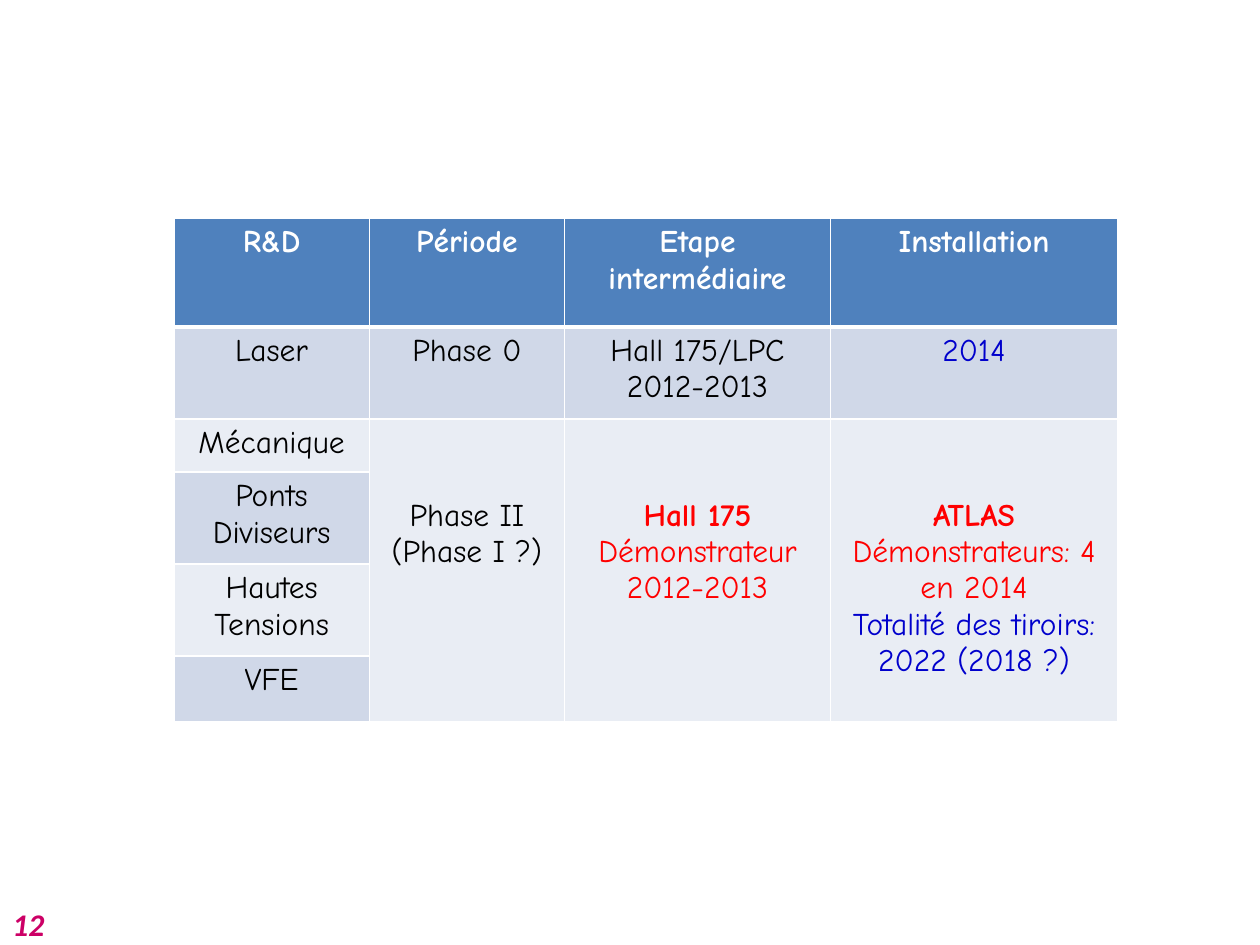
import pptx
import pptx.util
import pptx.dml.color
import pptx.enum.text
from lxml import etree

Pt = pptx.util.Pt
HUES = {"head": "4F81BD", "dark": "D0D8E8", "light": "E9EDF4", "white": "FFFFFF",
        "black": "000000", "red": "FF0000", "blue": "0000CC", "pink": "CC0066"}
NS = "http://schemas.openxmlformats.org/drawingml/2006/main"
COLS = [111.6, 111.6, 151.9, 164.2]
ROWS = [62.2, 52.6, 30.4, 52.6, 52.6, 37.4]
HEAD = [["R&D"], ["Période"], ["Etape", "intermédiaire"], ["Installation"]]
LASER = [(["Laser"], "black"), (["Phase 0"], "black"),
         (["Hall 175/LPC", "2012-2013"], "black"), (["2014"], "blue")]
PARTS = ["Mécanique", "Ponts Diviseurs", "Hautes Tensions", "VFE"]
PLANS = [
    [("Phase II", "black", False), ("(Phase I ?)", "black", False)],
    [("Hall 175", "red", True), ("Démonstrateur", "red", False),
     ("2012-2013", "red", False)],
    [("ATLAS", "red", True), ("Démonstrateurs: 4 en 2014", "red", False),
     ("Totalité des tiroirs:", "blue", False), ("2022 (2018 ?)", "blue", False)],
]


def color(name):
    return pptx.dml.color.RGBColor.from_string(HUES[name])


def style(par, name, face, bold=False, italic=False):
    font = par.font
    font.size, font.name = Pt(18), face
    font.bold, font.italic = bold, italic
    font.color.rgb = color(name)


def edge(cell, widths):
    props = cell._tc.get_or_add_tcPr()
    for spot, (side, width) in enumerate(zip("LRTB", widths)):
        line = etree.Element(f"{{{NS}}}ln{side}", w=str(Pt(width)))
        fill = etree.SubElement(line, f"{{{NS}}}solidFill")
        etree.SubElement(fill, f"{{{NS}}}srgbClr", val=HUES["white"])
        props.insert(spot, line)


def put(cell, lines):
    frame = cell.text_frame
    frame.text = "\n".join(text for text, _, _ in lines)
    for par, (_, name, bold) in zip(frame.paragraphs, lines):
        par.alignment = pptx.enum.text.PP_ALIGN.CENTER
        style(par, name, "Comic Neue", bold)


def add_plan(slide, left, top):
    frame = slide.shapes.add_table(len(ROWS), len(COLS), Pt(left), Pt(top),
                                   Pt(sum(COLS)), Pt(sum(ROWS)))
    table = frame.table
    table.first_row = table.horz_banding = False
    for col, width in zip(table.columns, COLS):
        col.width = Pt(width)
    for row, height in zip(table.rows, ROWS):
        row.height = Pt(height)
    for r in range(len(ROWS)):
        for c in range(len(COLS)):
            cell = table.cell(r, c)
            tone = "head" if r == 0 else "dark" if r % 2 else "light"
            cell.fill.solid()
            cell.fill.fore_color.rgb = color(tone)
            edge(cell, [1, 1, 3 if r == 1 else 1, 3 if r == 0 else 1])
    for c, texts in enumerate(HEAD):
        put(table.cell(0, c), [(text, "white", True) for text in texts])
    for c, (texts, name) in enumerate(LASER):
        put(table.cell(1, c), [(text, name, False) for text in texts])
    for r, text in enumerate(PARTS, 2):
        put(table.cell(r, 0), [(text, "black", False)])
    for c, lines in enumerate(PLANS, 1):
        cell = table.cell(2, c)
        cell.merge(table.cell(5, c))
        cell.margin_top = Pt(45)
        put(cell, lines)


def add_page(slide, left, top, width, height):
    box = slide.shapes.add_textbox(Pt(left), Pt(top), Pt(width), Pt(height))
    frame = box.text_frame
    frame.word_wrap = False
    frame.auto_size = pptx.enum.text.MSO_AUTO_SIZE.SHAPE_TO_FIT_TEXT
    frame.text = "12"
    style(frame.paragraphs[0], "pink", "Calibri", True, True)


def main():
    deck = pptx.Presentation()
    deck.slide_width, deck.slide_height = Pt(720), Pt(540)
    slide = deck.slides.add_slide(deck.slide_layouts[6])
    add_plan(slide, 99.4, 124.6)
    add_page(slide, 0, 513.4, 33.1, 28.8)
    deck.save("out.pptx")


if __name__ == "__main__":
    main()
